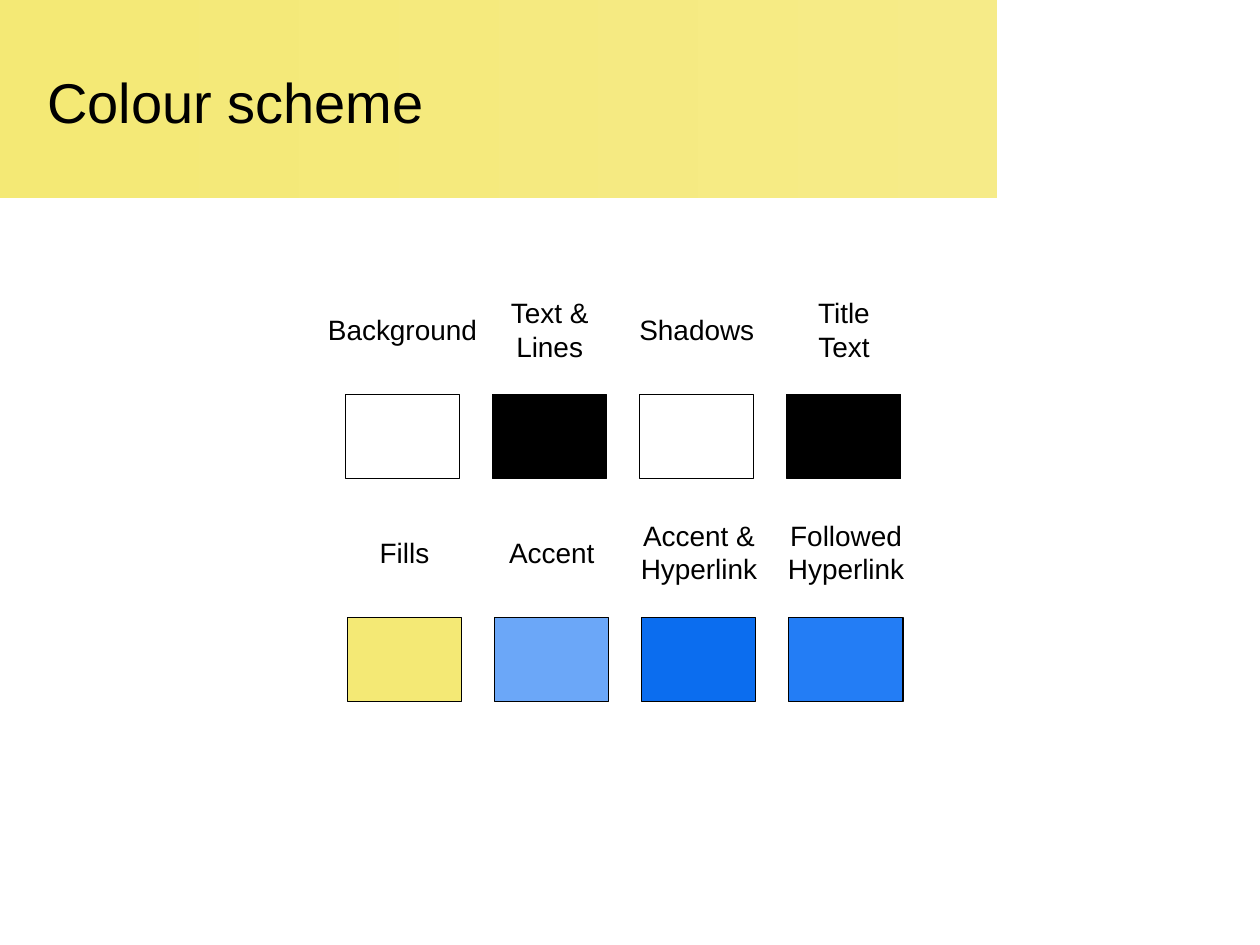
from pptx import Presentation
from pptx import util as u
from pptx.dml.color import RGBColor
from pptx.enum import shapes, text

BLACK = RGBColor(0x00, 0x00, 0x00)
WHITE = RGBColor(0xFF, 0xFF, 0xFF)
YELLOW = RGBColor(0xF4, 0xE9, 0x75)
PALE_YELLOW = RGBColor(0xF6, 0xEB, 0x88)
LIGHT_BLUE = RGBColor(0x6B, 0xA7, 0xF8)
STRONG_BLUE = RGBColor(0x0B, 0x6D, 0xEF)
MID_BLUE = RGBColor(0x23, 0x7D, 0xF5)

FONT = "Arial"
PITCH = 84.1
SWATCH_WIDTH, SWATCH_HEIGHT = 65.2, 48.2
LINE_HEIGHT, LABEL_PADDING = 19.4, 7.2

ROWS = [
    (197.3, 225.4, 230, 188.4, [
        (["Background"], 101, WHITE),
        (["Text &", "Lines"], 61, BLACK),
        (["Shadows"], 81, WHITE),
        (["Title\vText"], 46, BLACK),
    ]),
    (198.5, 352.8, 231.2, 315.6, [
        (["Fills"], 44, YELLOW),
        (["Accent"], 64, LIGHT_BLUE),
        (["Accent &", "Hyperlink"], 82, STRONG_BLUE),
        (["Followed", "Hyperlink"], 82, MID_BLUE),
    ]),
]


def add_rectangle(slide, left, top, width, height):
    box = slide.shapes.add_shape(
        shapes.MSO_SHAPE.RECTANGLE, u.Pt(left), u.Pt(top), u.Pt(width), u.Pt(height))
    box.shadow.inherit = False
    return box


def add_banner(slide):
    banner = add_rectangle(slide, 0, 0, 570, 113.4)
    banner.line.fill.background()
    banner.fill.gradient()
    banner.fill.gradient_angle = 0
    for stop, color in zip(banner.fill.gradient_stops, (YELLOW, PALE_YELLOW)):
        stop.color.rgb = color


def add_swatch(slide, left, top, color):
    swatch = add_rectangle(slide, left, top, SWATCH_WIDTH, SWATCH_HEIGHT)
    swatch.fill.solid()
    swatch.fill.fore_color.rgb = color
    swatch.line.color.rgb = BLACK
    swatch.line.width = u.Pt(0.75)


def add_span(para, words, size):
    span = para.add_run()
    span.text = words
    span.font.name = FONT
    span.font.size = u.Pt(size)
    span.font.color.rgb = BLACK


def add_title(slide, words):
    box = slide.shapes.add_textbox(u.Pt(19.8), u.Pt(21.6), u.Pt(538.6), u.Pt(72.7))
    frame = box.text_frame
    frame.word_wrap = True
    frame.vertical_anchor = text.MSO_ANCHOR.MIDDLE
    add_span(frame.paragraphs[0], words, 32)


def add_label(slide, center, middle, width, paragraphs):
    line_count = sum(len(words.split("\v")) for words in paragraphs)
    height = line_count * LINE_HEIGHT + LABEL_PADDING
    box = slide.shapes.add_textbox(
        u.Pt(center - width / 2), u.Pt(middle - height / 2), u.Pt(width), u.Pt(height))
    frame = box.text_frame
    frame.word_wrap = False
    frame.auto_size = text.MSO_AUTO_SIZE.SHAPE_TO_FIT_TEXT
    for index, words in enumerate(paragraphs):
        para = frame.add_paragraph() if index else frame.paragraphs[0]
        para.alignment = text.PP_ALIGN.CENTER
        for line_index, line in enumerate(words.split("\v")):
            if line_index:
                para.add_line_break()
            add_span(para, line, 16)


def main():
    deck = Presentation()
    deck.slide_width, deck.slide_height = u.Pt(720), u.Pt(540)
    slide = deck.slides.add_slide(deck.slide_layouts[6])
    add_banner(slide)
    add_title(slide, "Colour scheme")
    for left, top, center, middle, entries in ROWS:
        for column, (paragraphs, width, color) in enumerate(entries):
            offset = column * PITCH
            add_swatch(slide, left + offset, top, color)
            add_label(slide, center + offset, middle, width, paragraphs)
    deck.save("out.pptx")


if __name__ == "__main__":
    main()
